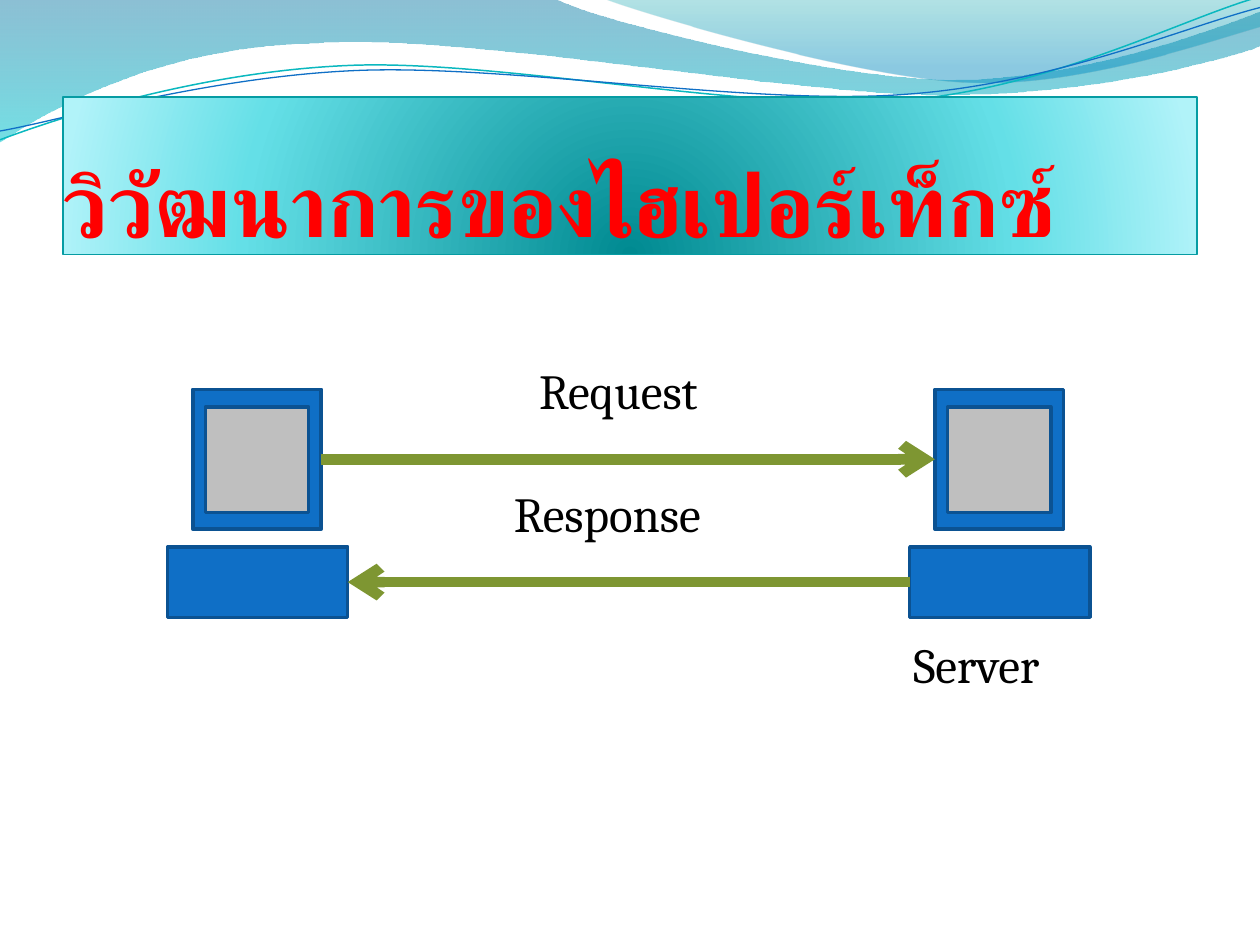
"""Build a slide showing a client and a server exchanging a request and a response."""
from lxml import etree
from pptx import Presentation
from pptx.dml.color import RGBColor
from pptx.enum.shapes import MSO_CONNECTOR, MSO_SHAPE
from pptx.enum.text import MSO_ANCHOR, PP_ALIGN
from pptx.oxml import parse_xml
from pptx.oxml.ns import nsdecls, qn
from pptx.util import Inches, Pt

RECT = MSO_SHAPE.RECTANGLE
STRAIGHT = MSO_CONNECTOR.STRAIGHT
BOTTOM, ALIGN_LEFT = MSO_ANCHOR.BOTTOM, PP_ALIGN.LEFT
LEFT_SIDE, RIGHT_SIDE = 1, 3

COLORS = {
    "title": "FF0000", "title_line": "069CA3",
    "text": "000000", "case": "0F6FC6", "case_line": "0B5292",
    "screen": "BFBFBF", "arrow": "7E9632",
    "teal_curve": "0AB8BF", "blue_curve": "0F6FC6",
}
TITLE = "วิวัฒนาการของไฮเปอร์เท็กซ์"
TITLE_BOX = (0.5, 0.77, 9, 1.25)
TITLE_STOPS = [(0, "008A91", 100), (68, "64DFE7", 100), (100, "B1F3F9", 100)]
DOWNWARD = '<a:lin ang="5400000" scaled="1"/>'
FROM_BOTTOM = ('<a:path path="circle"><a:fillToRect l="50000" t="130000" '
               'r="50000" b="-30000"/></a:path>')

WAVES = [
    ([(0, 0), (4.4, -0.01),
      (4.76, 0.17, 6.64, 0.63, 7.58, 0.63), (8.53, 0.63, 9.58, 0.26, 10, 0.09),
      (10.01, 0.36),
      (9.83, 0.44, 8.7, 0.76, 7.46, 0.75), (6.22, 0.75, 3.82, 0.28, 2.57, 0.34),
      (1.29, 0.36, 0.46, 0.83, -0.01, 1.13), (0, 0)],
     [(0, "0074A1", 45), (100, "00C6CF", 55)]),
    ([(4.79, -0.01),
      (5.09, 0.11, 6.82, 0.62, 7.69, 0.65), (8.56, 0.69, 9.61, 0.32, 10, 0.21),
      (10, 0), (4.79, -0.01)],
     [(0, "00A1A9", 30), (80, "008BBF", 45)]),
]
CURVES = [
    ([(0, 1.11), (0.48, 0.93, 1.58, 0.57, 2.77, 0.52),
      (3.95, 0.47, 5.93, 0.89, 7.13, 0.8), (8.33, 0.71, 9.38, 0.15, 9.98, -0.02)],
     "teal_curve", 0.85),
    ([(0, 1.04), (0.47, 0.96, 1.64, 0.61, 2.83, 0.56),
      (4.03, 0.51, 5.97, 0.84, 7.17, 0.75), (8.36, 0.67, 9.41, 0.21, 10, 0.06)],
     "blue_curve", 0.75),
]
COMPUTER_LEFTS = {"client": 1.33, "server": 7.22}
COMPUTER_PARTS = {
    "monitor": (0.2, 3.09, 1.02, 1.11, "case"),
    "base": (0, 4.34, 1.43, 0.56, "case"),
    "screen": (0.3, 3.23, 0.82, 0.84, "screen"),
}
MESSAGES = [("client", "server", "monitor", RIGHT_SIDE, LEFT_SIDE),
            ("server", "client", "base", LEFT_SIDE, RIGHT_SIDE)]
LABELS = [("Request", 4.18, 2.81, 1.95), ("Response", 3.98, 3.79, 2.26),
          ("Server", 7.15, 4.99, 1.6)]
LABEL_HEIGHT = 1.02


def rgb(name):
    return RGBColor.from_string(COLORS[name])


def set_line(line, color, width):
    line.color.rgb = rgb(color)
    line.width = Pt(width)


def set_gradient(shape, stops, direction):
    shape.fill.background()
    stop_xml = "".join(
        f'<a:gs pos="{pos * 1000}"><a:srgbClr val="{color}">'
        f'<a:alpha val="{opacity * 1000}"/></a:srgbClr></a:gs>'
        for pos, color, opacity in stops)
    gradient = parse_xml(f'<a:gradFill {nsdecls("a")} rotWithShape="1">'
                         f'<a:gsLst>{stop_xml}</a:gsLst>{direction}</a:gradFill>')
    properties = shape.element.spPr
    properties.replace(properties.find(qn("a:noFill")), gradient)


def add_outline(slide, segments, close):
    anchors = [tuple(map(Inches, segment[-2:])) for segment in segments]
    builder = slide.shapes.build_freeform(*anchors[0])
    builder.add_line_segments(anchors[1:], close=close)
    outline = builder.convert_to_shape()
    outline.shadow.inherit = False
    left, top = (min(values) for values in zip(*anchors))
    steps = list(outline.element.spPr.iter(qn("a:lnTo")))
    for step, segment in zip(steps, segments[1:]):
        if len(segment) == 6:
            bend = etree.Element(qn("a:cubicBezTo"))
            for x, y in zip(segment[::2], segment[1::2]):
                etree.SubElement(bend, qn("a:pt"), x=str(Inches(x) - left),
                                 y=str(Inches(y) - top))
            step.getparent().replace(step, bend)
    return outline


def add_box(slide, box):
    shape = slide.shapes.add_shape(RECT, *map(Inches, box))
    shape.shadow.inherit = False
    return shape


def add_run(paragraph, text, font, size, color, bold=False):
    run = paragraph.add_run()
    run.text = text
    run.font.name, run.font.size, run.font.bold = font, Pt(size), bold
    run.font.color.rgb = rgb(color)


def add_title(slide):
    banner = add_box(slide, TITLE_BOX)
    set_gradient(banner, TITLE_STOPS, FROM_BOTTOM)
    set_line(banner.line, "title_line", 0.75)
    frame = banner.text_frame
    frame.word_wrap = True
    frame.vertical_anchor = BOTTOM
    frame.margin_left = frame.margin_right = frame.margin_bottom = 0
    frame.margin_top = Inches(0.05)
    frame.paragraphs[0].alignment = ALIGN_LEFT
    add_run(frame.paragraphs[0], TITLE, "Calibri", 50, "title", True)


def add_computer(slide, left):
    parts = {}
    for part, (offset, top, width, height, color) in COMPUTER_PARTS.items():
        shape = add_box(slide, (left + offset, top, width, height))
        shape.fill.solid()
        shape.fill.fore_color.rgb = rgb(color)
        set_line(shape.line, "case_line", 2)
        parts[part] = shape
    return parts


def add_message(slide, sender, sender_side, receiver, receiver_side):
    arrow = slide.shapes.add_connector(STRAIGHT, 0, 0, 0, 0)
    arrow.begin_connect(sender, sender_side)
    arrow.end_connect(receiver, receiver_side)
    set_line(arrow.line, "arrow", 6)
    line = arrow.element.spPr.find(qn("a:ln"))
    etree.SubElement(line, qn("a:tailEnd"), type="arrow")
    etree.SubElement(arrow.element.spPr, qn("a:effectLst"))


def main():
    deck = Presentation()
    deck.slide_width, deck.slide_height = Inches(10), Inches(7.5)
    slide = deck.slides.add_slide(deck.slide_layouts[6])

    for segments, stops in WAVES:
        wave = add_outline(slide, segments, True)
        set_gradient(wave, stops, DOWNWARD)
        wave.line.fill.background()
    for segments, color, width in CURVES:
        curve = add_outline(slide, segments, False)
        curve.fill.background()
        set_line(curve.line, color, width)
    add_title(slide)

    computers = {role: add_computer(slide, left)
                 for role, left in COMPUTER_LEFTS.items()}
    for sender, receiver, part, sender_side, receiver_side in MESSAGES:
        add_message(slide, computers[sender][part], sender_side,
                    computers[receiver][part], receiver_side)
    for text, left, top, width in LABELS:
        label = slide.shapes.add_textbox(
            *map(Inches, (left, top, width, LABEL_HEIGHT)))
        label.text_frame.word_wrap = True
        add_run(label.text_frame.paragraphs[0], text, "Cambria", 28, "text")

    deck.save("out.pptx")


if __name__ == "__main__":
    main()
